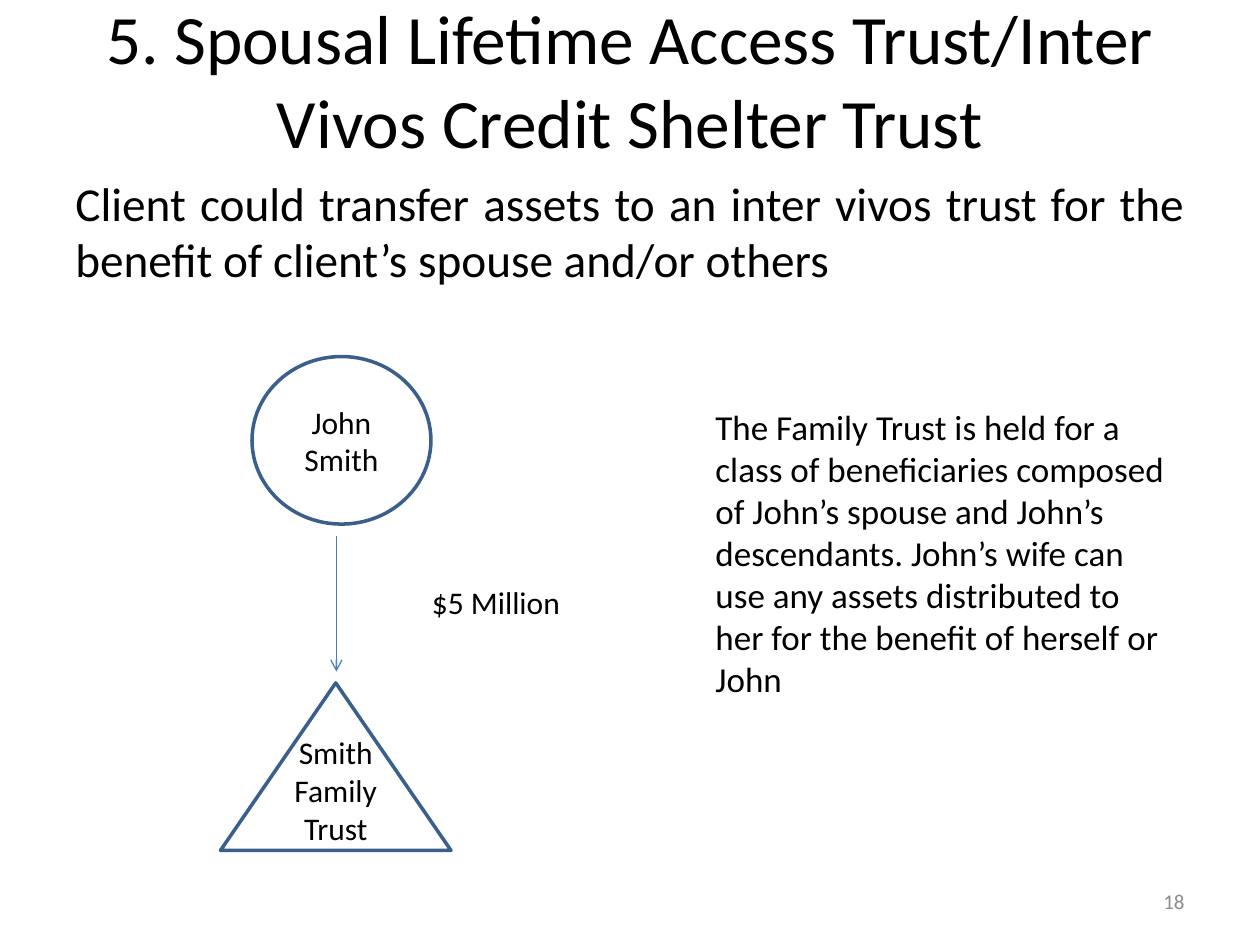
from lxml import etree
from pptx import Presentation
from pptx.dml.color import RGBColor
from pptx.enum import shapes, text
from pptx.oxml import ns
from pptx.util import Inches, Pt

COLORS = {"ink": "000000", "muted": "8C8C8C", "paper": "FFFFFF",
          "edge": "3A5F8C", "arrow": "4B7EBC"}
ALIGN = text.PP_ALIGN
ANCHOR = text.MSO_ANCHOR


def color(name):
    return RGBColor.from_string(COLORS[name])


def write(shape, words, size=18, ink="ink", align=ALIGN.LEFT,
          anchor=ANCHOR.TOP, bottom=0.05):
    """Fill a shape with one formatted paragraph; bottom is an inset in inches."""
    frame = shape.text_frame
    frame.word_wrap = True
    frame.vertical_anchor = anchor
    frame.margin_bottom = Inches(bottom)
    para = frame.paragraphs[0]
    para.alignment = align
    run = para.add_run()
    run.text = words
    run.font.name = "Calibri"
    run.font.size = Pt(size)
    run.font.color.rgb = color(ink)


def label(slide, box, words, **style):
    write(slide.shapes.add_textbox(*map(Inches, box)), words, **style)


def node(slide, kind, box, words, **style):
    shape = slide.shapes.add_shape(kind, *map(Inches, box))
    shape.shadow.inherit = False
    shape.fill.solid()
    shape.fill.fore_color.rgb = color("paper")
    shape.line.color.rgb = color("edge")
    shape.line.width = Pt(2)
    write(shape, words, align=ALIGN.CENTER, anchor=ANCHOR.MIDDLE, **style)


def arrow(slide, *ends):
    link = slide.shapes.add_connector(
        shapes.MSO_CONNECTOR.STRAIGHT, *map(Inches, ends))
    link.line.color.rgb = color("arrow")
    link.line.width = Pt(0.75)
    etree.SubElement(link.line._get_or_add_ln(), ns.qn("a:tailEnd"), type="arrow")
    etree.SubElement(link._element.spPr, ns.qn("a:effectLst"))


def main():
    deck = Presentation()
    deck.slide_width, deck.slide_height = Inches(10), Inches(7.5)
    slide = deck.slides.add_slide(deck.slide_layouts[6])

    label(slide, (0.5, 0, 9, 1.25),
          "5. Spousal Lifetime Access Trust/Inter Vivos Credit Shelter Trust",
          size=39.6, align=ALIGN.CENTER, anchor=ANCHOR.MIDDLE)
    label(slide, (0.5, 1.33, 9, 5.58),
          "Client could transfer assets to an inter vivos trust for the "
          "benefit of client’s spouse and/or others",
          size=27, align=ALIGN.JUSTIFY)
    label(slide, (7.17, 6.95, 2.33, 0.4), "18", size=12, ink="muted",
          align=ALIGN.RIGHT, anchor=ANCHOR.MIDDLE)

    kinds = shapes.MSO_SHAPE
    node(slide, kinds.OVAL, (2, 2.83, 1.42, 1.33), "John Smith")
    node(slide, kinds.ISOSCELES_TRIANGLE, (1.75, 5.42, 1.83, 1.33),
         "Smith Family Trust", bottom=0.35)
    arrow(slide, 2.67, 4.25, 2.67, 5.33)
    label(slide, (3.33, 4.58, 1.58, 0.4), "$5 Million")
    label(slide, (5.58, 3.17, 3.83, 2.46),
          "The Family Trust is held for a class of beneficiaries composed of "
          "John’s spouse and John’s descendants. John’s wife can use any "
          "assets distributed to her for the benefit of herself or John",
          size=20)

    deck.save("out.pptx")


if __name__ == "__main__":
    main()
